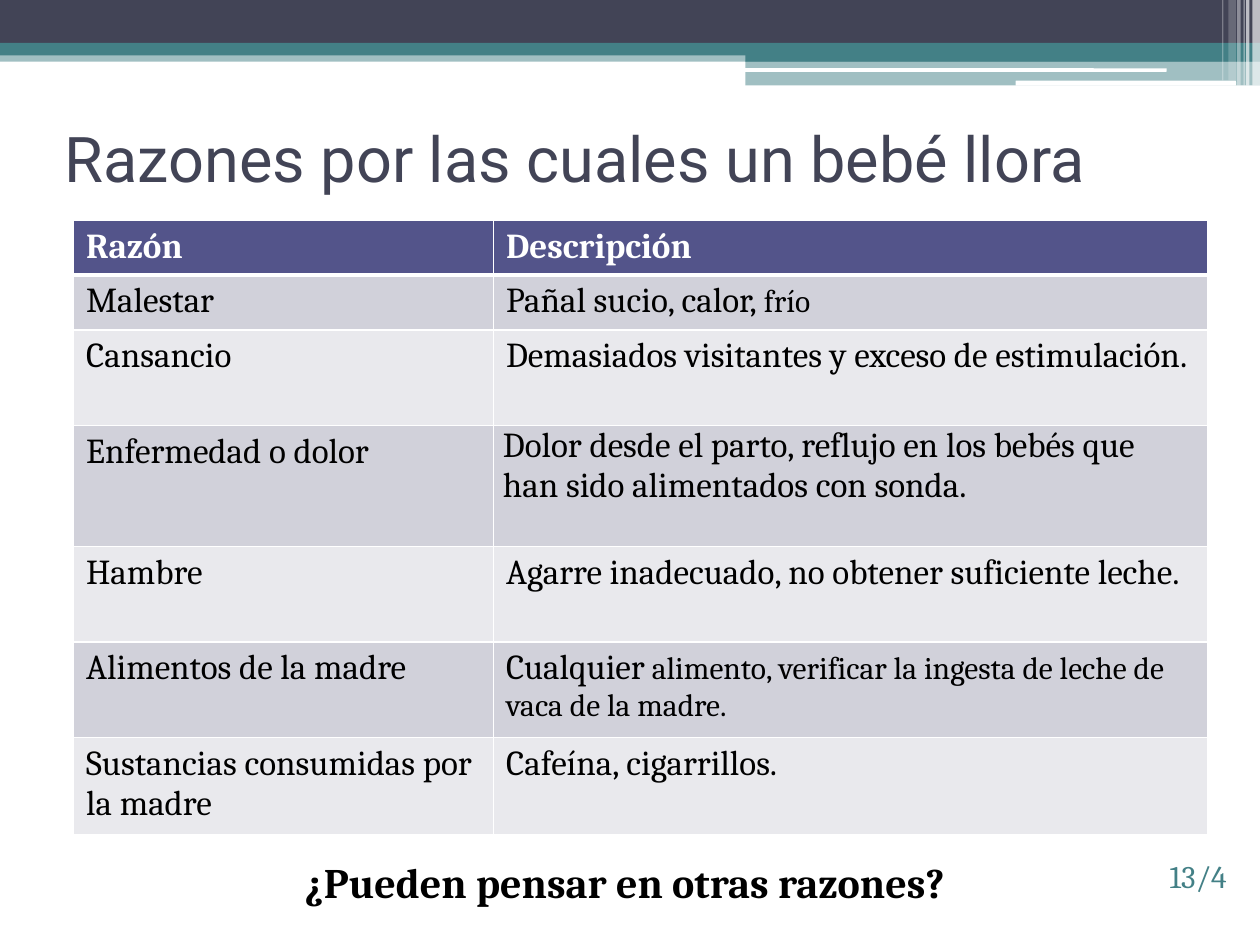
from lxml.etree import SubElement
from pptx import Presentation
from pptx.dml.color import RGBColor
from pptx.enum.shapes import MSO_SHAPE as Shape
from pptx.enum.text import MSO_ANCHOR as Anchor, PP_ALIGN as Align
from pptx.oxml.ns import qn
from pptx.util import Pt

WHITE = RGBColor(0xFF, 0xFF, 0xFF)
BLACK = RGBColor(0, 0, 0)
SLATE = RGBColor(0x42, 0x44, 0x56)
TEAL = RGBColor(0x43, 0x80, 0x86)
INDIGO = RGBColor(0x53, 0x54, 0x8A)
BANDS = (RGBColor(0xD1, 0xD1, 0xDA), RGBColor(0xE9, 0xE9, 0xED))
SERIF = "Cambria"

# left, top, width, height, colour, opacity in percent
BARS = [
    (0, 28.8, 720, 6.5, TEAL, 50),
    (0, 0, 720, 24.5, SLATE, 100),
    (0, 24.5, 720, 7.2, TEAL, 100),
    (426, 28, 294, 7.2, TEAL, 100),
    (426, 34.6, 294, 14.2, TEAL, 50),
]
PILLS = [(425.5, 39, 241.2, 2), (580.3, 46.1, 126, 2.9)]
# left, width, height, opacity in percent
STRIPES = [
    (715.7, 4.3, 49, 65),
    (712, 2, 49, 65),
    (710.6, 0.7, 49, 60),
    (707, 2, 49, 40),
    (702, 4.3, 46, 20),
    (698.4, 0.7, 46, 30),
]

COLS = (240, 408)
# height, reason, runs of the description with their sizes
ROWS = [
    (30.5, "Razón", [("Descripción", 20)]),
    (31, "Malestar", [("Pañal sucio, calor,", 20), (" frío", 18)]),
    (54.7, "Cansancio",
     [("Demasiados visitantes y exceso de estimulación.", 20)]),
    (69, "Enfermedad o dolor",
     [("Dolor desde el parto, reflujo en los bebés que han "
       "sido alimentados con sonda.", 20)]),
    (54.7, "Hambre",
     [("Agarre inadecuado, no obtener suficiente leche.", 20)]),
    (54.7, "Alimentos de la madre",
     [("Cualquier", 20),
      (" alimento, verificar la ingesta de leche de vaca de la madre.", 18)]),
    (52.5, "Sustancias consumidas por la madre",
     [("Cafeína, cigarrillos.", 20)]),
]
TIGHT = 3  # row whose description has narrow margins


def add_bar(slide, box, color, alpha=100, kind=Shape.RECTANGLE):
    bar = slide.shapes.add_shape(kind, *map(Pt, box))
    bar.shadow.inherit = False
    bar.line.fill.background()
    bar.fill.solid()
    bar.fill.fore_color.rgb = color
    if alpha < 100:
        tone = bar.fill._xPr.find(".//" + qn("a:srgbClr"))
        SubElement(tone, qn("a:alpha"), val=str(alpha * 1000))


def add_text(slide, box, text, size, color, face=SERIF, bold=False,
             align=Align.LEFT, anchor=Anchor.TOP):
    frame = slide.shapes.add_textbox(*map(Pt, box)).text_frame
    frame.word_wrap = True
    frame.vertical_anchor = anchor
    para = frame.paragraphs[0]
    para.text = text
    para.alignment = align
    set_font(para.font, size, color, face, bold)


def set_font(font, size, color, face=SERIF, bold=False):
    font.size = Pt(size)
    font.color.rgb = color
    font.name = face
    font.bold = bold


def set_edges(cell, top, bottom):
    """Draw white borders; top and bottom widths are in points."""
    props = cell._tc.get_or_add_tcPr()
    for side, width in zip("LRTB", (1, 1, top, bottom)):
        line = SubElement(props, qn("a:ln" + side), w=str(Pt(width)))
        fill = SubElement(line, qn("a:solidFill"))
        SubElement(fill, qn("a:srgbClr"), val=str(WHITE))


def fill_cell(cell, runs, row):
    head = row == 0
    set_edges(cell, 3 if row == 1 else 1, 3 if head else 1)
    cell.fill.solid()
    cell.fill.fore_color.rgb = INDIGO if head else BANDS[(row - 1) % 2]
    para = cell.text_frame.paragraphs[0]
    set_font(para.font, runs[0][1], WHITE if head else BLACK, bold=head)
    for text, size in runs:
        run = para.add_run()
        run.text = text
        if size != runs[0][1]:
            run.font.size = Pt(size)


def add_grid(slide):
    high = sum(row[0] for row in ROWS)
    box = map(Pt, (42, 126, sum(COLS), high))
    table = slide.shapes.add_table(len(ROWS), len(COLS), *box).table
    table.horz_banding = False
    for col, width in zip(table.columns, COLS):
        col.width = Pt(width)
    for i, (height, reason, runs) in enumerate(ROWS):
        table.rows[i].height = Pt(height)
        fill_cell(table.cell(i, 0), [(reason, 20)], i)
        fill_cell(table.cell(i, 1), runs, i)
    cell = table.cell(TIGHT, 1)
    cell.margin_left = cell.margin_right = Pt(5.4)
    cell.margin_top = cell.margin_bottom = 0


def main():
    deck = Presentation()
    deck.slide_width, deck.slide_height = Pt(720), Pt(540)
    slide = deck.slides.add_slide(deck.slide_layouts[6])
    for *box, color, alpha in BARS:
        add_bar(slide, box, color, alpha)
    for box in PILLS:
        add_bar(slide, box, WHITE, kind=Shape.ROUNDED_RECTANGLE)
    for left, width, height, alpha in STRIPES:
        add_bar(slide, (left, 0, width, height), WHITE, alpha)
    add_text(slide, (30, 48, 648, 84), "Razones por las cuales un bebé llora",
             36, SLATE, "Roboto", anchor=Anchor.MIDDLE)
    add_grid(slide)
    add_text(slide, (66, 486, 582, 36), "¿Pueden pensar en otras razones?",
             24, BLACK, bold=True, align=Align.CENTER)
    add_text(slide, (606, 486, 102, 36), "13/4", 18, TEAL, align=Align.RIGHT)
    deck.save("out.pptx")


if __name__ == "__main__":
    main()
